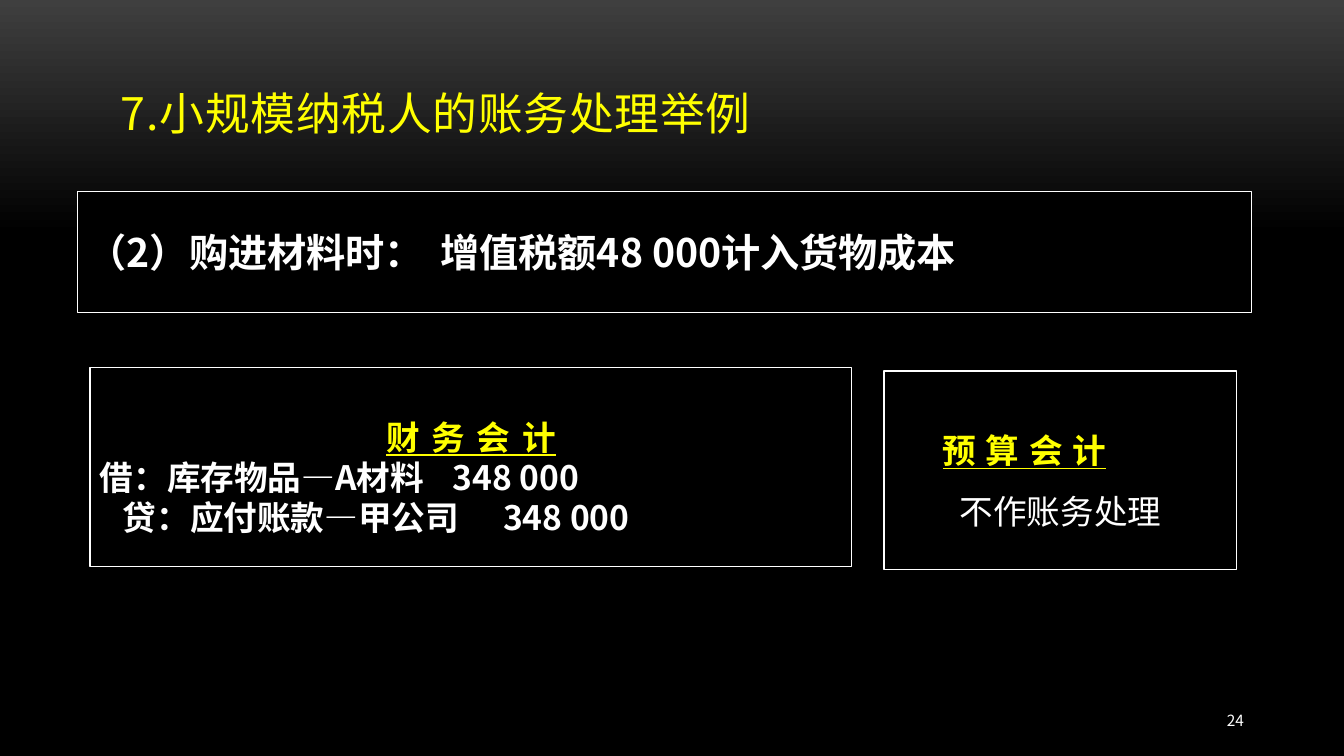
from dataclasses import dataclass

from lxml.etree import SubElement
from pptx import Presentation
from pptx.dml.color import RGBColor
from pptx.enum.shapes import MSO_SHAPE
from pptx.enum.text import MSO_ANCHOR, MSO_AUTO_SIZE, PP_ALIGN
from pptx.oxml.ns import qn
from pptx.util import Cm, Pt


@dataclass(frozen=True)
class Theme:
    font: str = "Noto Sans CJK SC"
    black: RGBColor = RGBColor(0x00, 0x00, 0x00)
    grey: RGBColor = RGBColor(0x3F, 0x3F, 0x3F)
    white: RGBColor = RGBColor(0xFF, 0xFF, 0xFF)
    yellow: RGBColor = RGBColor(0xFF, 0xFF, 0x00)
    title_size: int = 32
    event_size: int = 28
    entry_size: int = 24
    number_size: int = 11
    outline: float = 0.85


THEME = Theme()

STYLES = {
    "title": {"size": Pt(THEME.title_size), "color": THEME.yellow, "bold": False},
    "event": {"size": Pt(THEME.event_size), "color": THEME.white, "bold": True},
    "heading": {"size": Pt(THEME.entry_size), "color": THEME.yellow,
                "bold": True, "underline": True},
    "entry": {"size": Pt(THEME.entry_size), "color": THEME.white, "bold": True},
    "remark": {"size": Pt(THEME.entry_size), "color": THEME.white, "bold": False},
    "number": {"size": Pt(THEME.number_size), "color": THEME.white},
}

# Each line: text, style, paragraph layout
TITLE = ("7.小规模纳税人的账务处理举例", "title", {"tracking": 0.5})
SLIDE_NUMBER = ("24", "number", {"alignment": PP_ALIGN.RIGHT})
EVENT = [("（2）购进材料时：\t增值税额48 000计入货物成本", "event", {"tab": Cm(9.36)})]
FINANCIAL = [
    ("财 务 会 计", "heading",
     {"alignment": PP_ALIGN.CENTER, "line_spacing": 1.5, "tracking": 1.5}),
    ("借：库存物品—A材料\t348 000", "entry", {"tab": Cm(10.34)}),
    ("贷：应付账款—甲公司\t348 000", "entry", {"tab": Cm(10.62), "indent": Cm(0.58)}),
]
BUDGET = [
    ("预 算 会 计", "heading", {"line_spacing": 1.5, "tracking": 0.7, "indent": Cm(1.23)}),
    ("不作账务处理", "remark", {"alignment": PP_ALIGN.CENTER, "line_spacing": 1.5}),
]

# Left, top, width, height
TITLE_AREA = (Cm(2.79), Cm(2.24), Cm(25.6), Cm(1.4))
NUMBER_AREA = (Cm(27.94), Cm(17.65), Cm(3.66), Cm(1.02))
BOXES = [
    (FINANCIAL, (Cm(2.27), Cm(9.27), Cm(19.2), Cm(5))),
    (EVENT, (Cm(1.96), Cm(4.83), Cm(29.59), Cm(3.05))),
    (BUDGET, (Cm(22.28), Cm(9.35), Cm(8.89), Cm(5))),
]


def write_line(paragraph, text, style, layout):
    properties = paragraph._p.get_or_add_pPr()
    if "tab" in layout:
        tabs = SubElement(properties, qn("a:tabLst"))
        SubElement(tabs, qn("a:tab"), pos=str(layout["tab"]), algn="l")
    properties.set("marL", "0")
    properties.set("indent", str(layout.get("indent", 0)))
    paragraph.alignment = layout.get("alignment", PP_ALIGN.LEFT)
    paragraph.line_spacing = layout.get("line_spacing", 1.0)
    paragraph.space_before = Pt(0)

    run = paragraph.add_run()
    run.text = text
    run.font.name = THEME.font
    for name, value in STYLES[style].items():
        if name == "color":
            run.font.color.rgb = value
        else:
            setattr(run.font, name, value)
    run_properties = run._r.get_or_add_rPr()
    SubElement(run_properties, qn("a:ea"), typeface=THEME.font)
    if "tracking" in layout:
        run_properties.set("spc", str(round(layout["tracking"] * 100)))


def write_lines(shape, lines, anchor):
    frame = shape.text_frame
    frame.word_wrap = True
    frame.auto_size = MSO_AUTO_SIZE.NONE
    frame.vertical_anchor = anchor
    for index, line in enumerate(lines):
        paragraph = frame.add_paragraph() if index else frame.paragraphs[0]
        write_line(paragraph, *line)


def paint_background(slide):
    fill = slide.background.fill
    fill.gradient()
    fill.gradient_angle = 270
    stops = [(0, THEME.grey), (0.31, THEME.black)]
    for stop, (position, color) in zip(fill.gradient_stops, stops):
        stop.position = position
        stop.color.rgb = color


def add_box(slide, lines, area):
    box = slide.shapes.add_shape(MSO_SHAPE.RECTANGLE, *area)
    box.shadow.inherit = False
    box.fill.solid()
    box.fill.fore_color.rgb = THEME.black
    box.line.color.rgb = THEME.white
    box.line.width = Pt(THEME.outline)
    write_lines(box, lines, MSO_ANCHOR.MIDDLE)


def main():
    presentation = Presentation()
    presentation.slide_width, presentation.slide_height = Cm(33.87), Cm(19.05)
    slide = presentation.slides.add_slide(presentation.slide_layouts[5])
    paint_background(slide)

    title = slide.shapes.title
    title.left, title.top, title.width, title.height = TITLE_AREA
    write_lines(title, [TITLE], MSO_ANCHOR.BOTTOM)
    for lines, area in BOXES:
        add_box(slide, lines, area)
    number = slide.shapes.add_textbox(*NUMBER_AREA)
    write_lines(number, [SLIDE_NUMBER], MSO_ANCHOR.MIDDLE)

    presentation.save("out.pptx")


if __name__ == "__main__":
    main()
